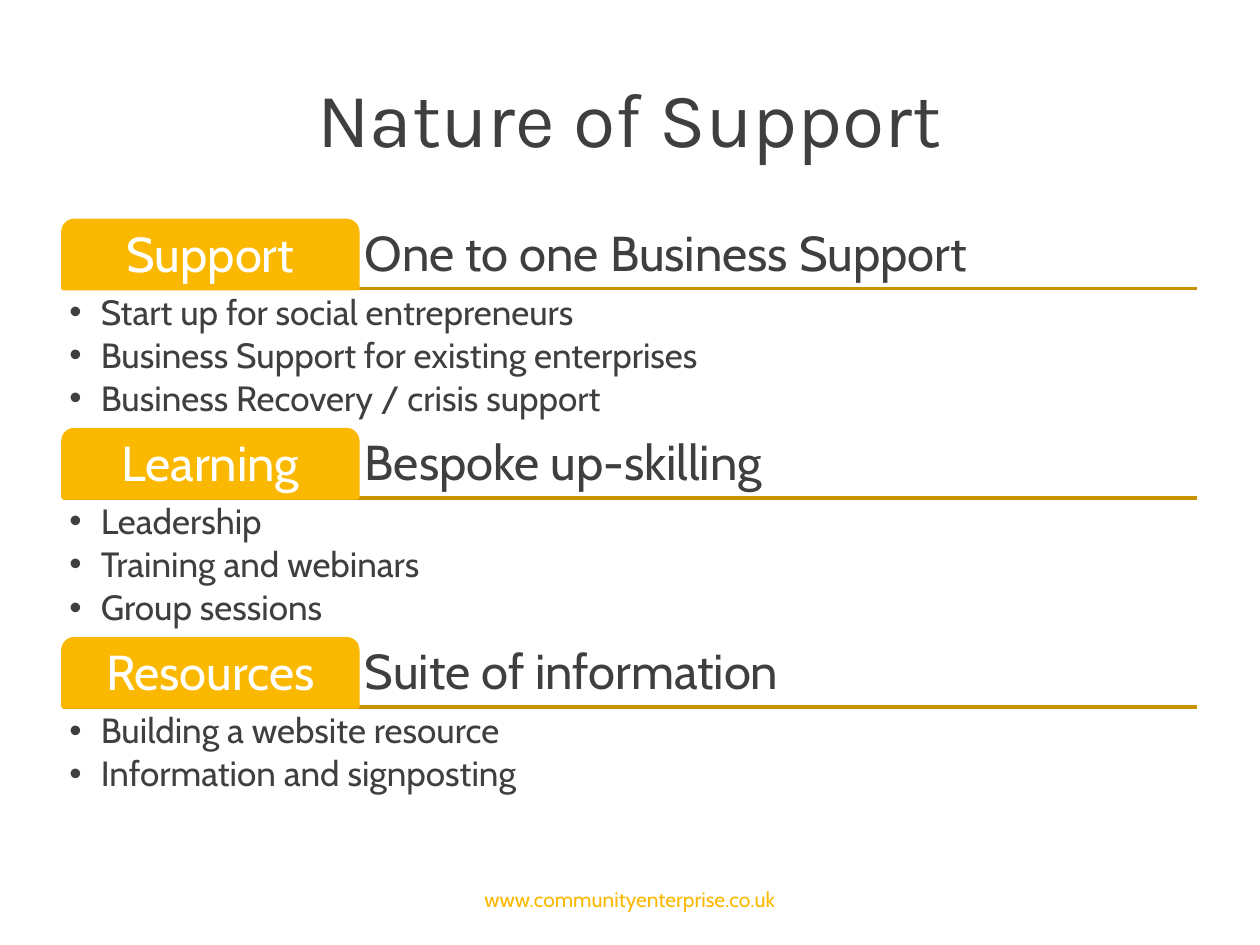
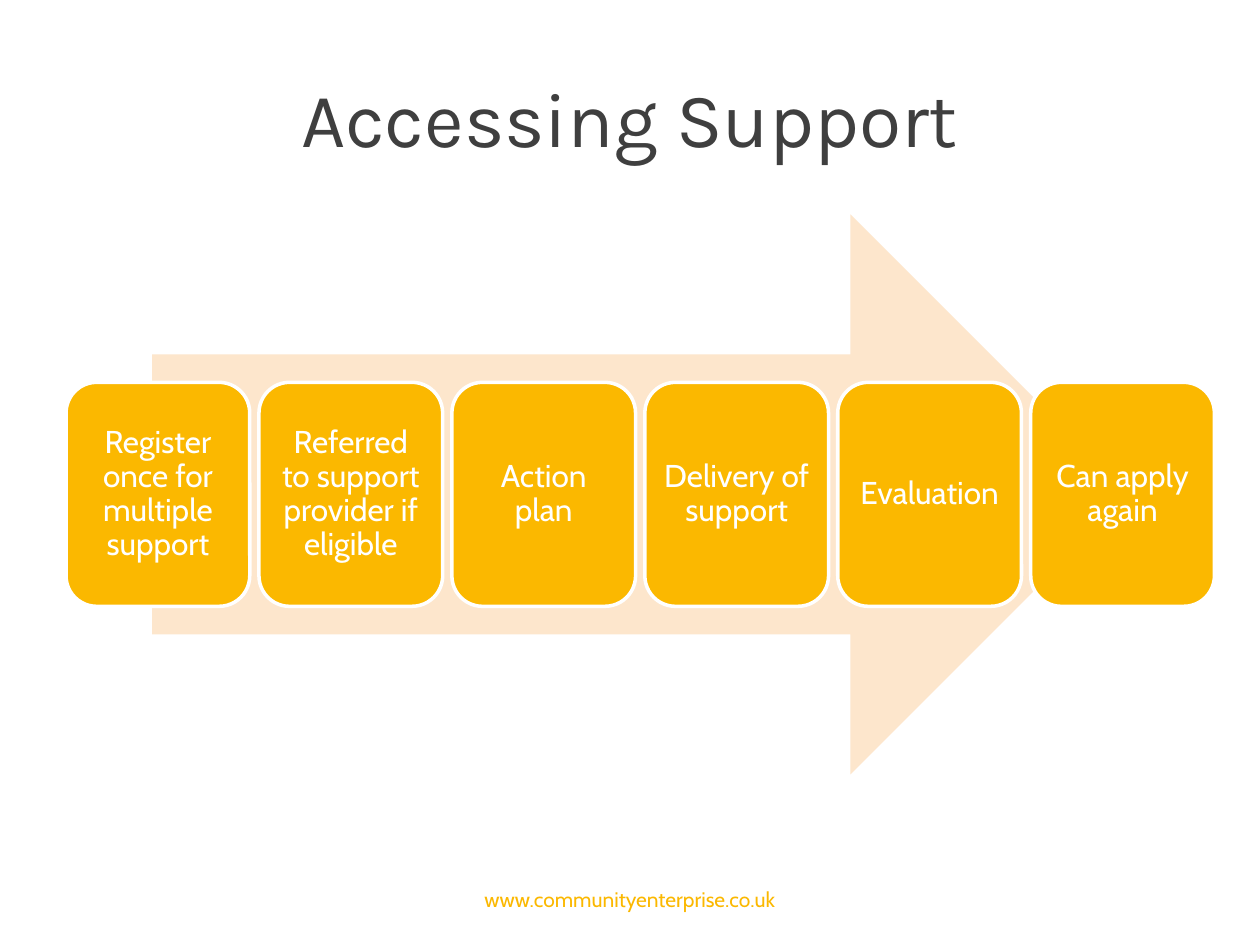
from dataclasses import dataclass

from lxml import etree
from pptx import Presentation
from pptx import util as u
from pptx.dml.color import RGBColor
from pptx.enum import shapes, text
from pptx.oxml import ns

Pt = u.Pt
KIND = shapes.MSO_SHAPE
ALIGN = text.PP_ALIGN
ANCHOR = text.MSO_ANCHOR


@dataclass(frozen=True)
class Theme:
    # Colours
    ink: str = "3F3F3F"
    gold: str = "FBB800"
    dark: str = "C99300"
    pale: str = "FDE6CC"
    white: str = "FFFFFF"
    # Fonts and type sizes
    head: str = "Karla"
    body: str = "Cabin"
    title: int = 44
    label: int = 28
    item: int = 20
    step: int = 18
    foot: int = 12


class Deck:
    def __init__(self, theme):
        self.theme = theme
        self.prs = Presentation()
        self.prs.slide_width, self.prs.slide_height = Pt(720), Pt(540)
        self.slide = None

    def page(self, title):
        """Start a slide with its title and footer."""
        t = self.theme
        self.slide = self.prs.slides.add_slide(self.prs.slide_layouts[5])
        head = self.slide.shapes.title
        head.left, head.top, head.width, head.height = map(Pt, (36, 21.6, 648, 90))
        self.fill_text(head, [title], t.title, t.ink, font=t.head, pad=(7.2, 3.6),
                       align=ALIGN.CENTER, lead=1)
        self.label(["www.communityenterprise.co.uk"], (246, 500.4, 228, 28.8),
                   t.foot, t.gold, pad=(7.2, 3.6), align=ALIGN.CENTER)

    def fill_text(self, shape, lines, size, color, font=None, pad=(4, 4),
                  align=ALIGN.LEFT, anchor=ANCHOR.MIDDLE, lead=0.9, bullet=False):
        frame = shape.text_frame
        frame.word_wrap = True
        frame.auto_size = text.MSO_AUTO_SIZE.NONE
        frame.vertical_anchor = anchor
        frame.margin_left = frame.margin_right = Pt(pad[0])
        frame.margin_top = frame.margin_bottom = Pt(pad[1])
        frame.text = "\n".join(lines)
        for para in frame.paragraphs:
            if bullet:
                self.dot(para)
            para.alignment = align
            para.line_spacing = lead
            para.font.name = font or self.theme.body
            para.font.size = Pt(size)
            para.font.color.rgb = RGBColor.from_string(color)

    def dot(self, para):
        """Give a paragraph a hanging bullet."""
        props = para._p.get_or_add_pPr()
        props.set("marL", str(Pt(18)))
        props.set("indent", str(Pt(-18)))
        etree.SubElement(props, ns.qn("a:buFont")).set("typeface", "Arial")
        etree.SubElement(props, ns.qn("a:buChar")).set("char", "•")
        para.space_after = Pt(3)

    def label(self, lines, box, size, color, **style):
        shape = self.slide.shapes.add_textbox(*map(Pt, box))
        self.fill_text(shape, lines, size, color, **style)

    def block(self, kind, box, fill, edge=None):
        shape = self.slide.shapes.add_shape(kind, *map(Pt, box))
        shape.shadow.inherit = False
        shape.fill.solid()
        shape.fill.fore_color.rgb = RGBColor.from_string(fill)
        if edge:
            shape.line.color.rgb = RGBColor.from_string(edge)
            shape.line.width = Pt(2)
        else:
            shape.line.fill.background()
        return shape

    def rule(self, left, right, top, color):
        line = self.slide.shapes.add_connector(
            shapes.MSO_CONNECTOR.STRAIGHT, Pt(left), Pt(top), Pt(right), Pt(top))
        line.line.color.rgb = RGBColor.from_string(color)
        line.line.width = Pt(2)
        etree.SubElement(line._element.spPr, ns.qn("a:effectLst"))


def nature(deck):
    t = deck.theme
    deck.page("Nature of Support")
    rows = [
        ("Support", "One to one Business Support",
         ["Start up for social entrepreneurs",
          "Business Support for existing enterprises",
          "Business Recovery / crisis support"]),
        ("Learning", "Bespoke up-skilling",
         ["Leadership", "Training and webinars", "Group sessions"]),
        ("Resources", "Suite of information",
         ["Building a website resource", "Information and signposting"]),
    ]
    left, wide, tab, high = 36, 648, 168.5, 39
    for i, (name, topic, items) in enumerate(rows):
        top = 126 + i * 119.5
        base = top + high
        # Underline, topic and tab
        deck.rule(left, left + wide, base, t.dark)
        deck.label([topic], (left + tab, top, wide - tab, high), t.label, t.ink,
                   anchor=ANCHOR.BOTTOM)
        shape = deck.block(KIND.ROUND_2_SAME_RECTANGLE, (left, top, tab, high),
                           t.gold, t.gold)
        deck.fill_text(shape, [name], t.label, t.white, align=ALIGN.CENTER)
        # Items below
        deck.label(items, (left, base, wide, 78.5), t.item, t.ink,
                   pad=(3.6, 3.6), anchor=ANCHOR.TOP, bullet=True)


def access(deck):
    t = deck.theme
    deck.page("Accessing Support")
    # Arrow behind the steps
    deck.block(KIND.RIGHT_ARROW, (87, 122.5, 559, 320), t.pale)
    # Steps at equal gaps
    steps = ["Register once for multiple support",
             "Referred to support provider if eligible",
             "Action plan", "Delivery of support", "Evaluation",
             "Can apply again"]
    for i, step in enumerate(steps):
        shape = deck.block(KIND.ROUNDED_RECTANGLE,
                           (37.75 + i * 110.25, 218.5, 105, 128), t.gold, t.white)
        deck.fill_text(shape, [step], t.step, t.white, pad=(5, 5),
                       align=ALIGN.CENTER)


def main():
    deck = Deck(Theme())
    nature(deck)
    access(deck)
    deck.prs.save("out.pptx")


if __name__ == "__main__":
    main()
